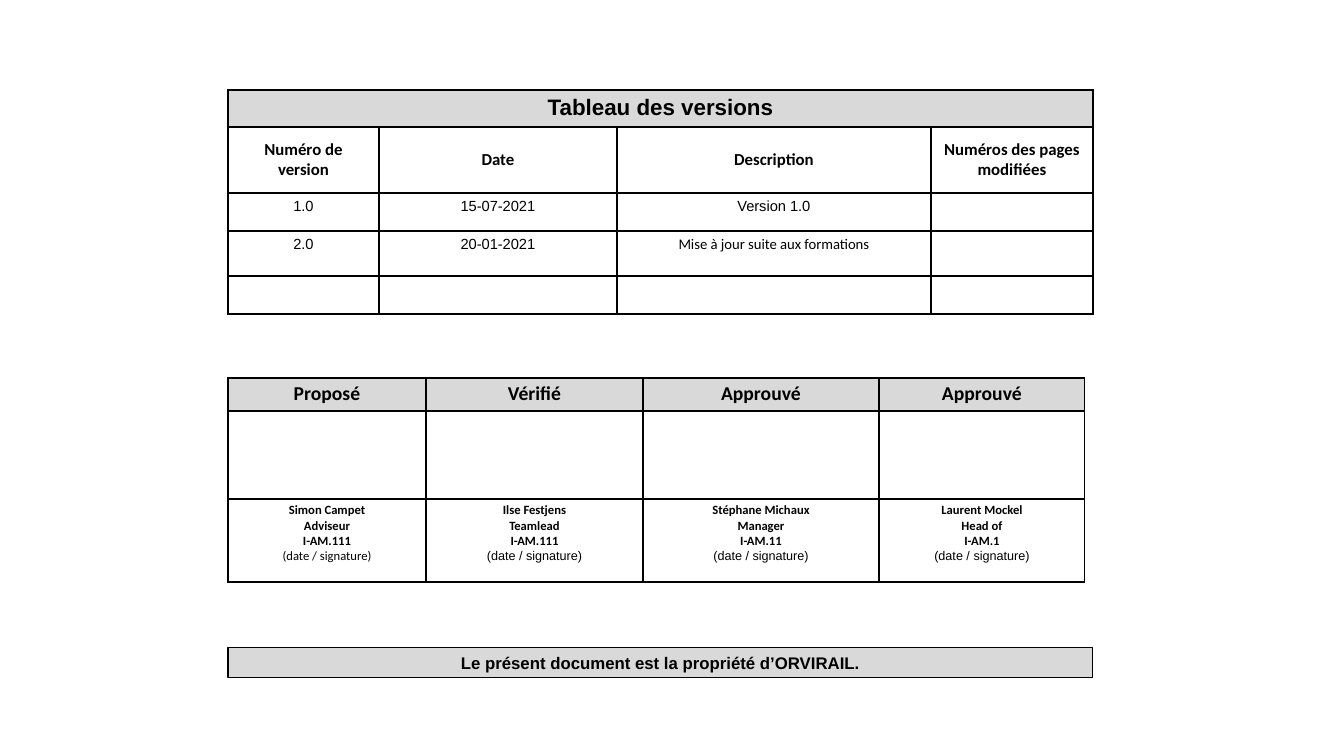
from lxml.etree import SubElement
from pptx import Presentation
from pptx.dml.color import RGBColor
from pptx.enum.shapes import MSO_SHAPE
from pptx.enum.text import MSO_ANCHOR, PP_ALIGN
from pptx.oxml.ns import qn
from pptx.util import Emu, Pt

COLORS = {"text": "000000", "line": "000000", "band": "D9D9D9", "cell": "FFFFFF"}

# Text styles: font, size in points, bold
STYLES = {
    "title": ("Arial", 16, True),
    "header": ("Calibri", 12, True),
    "body": ("Arial", 10.5, False),
    "body_calibri": ("Calibri", 10.5, False),
    "role": ("Calibri", 14, True),
    "person": ("Calibri", 9, True),
    "sign": ("Arial", 9, False),
    "sign_calibri": ("Calibri", 9, False),
    "footer": ("Arial", 12, True),
}

VERSION_TITLE = "Tableau des versions"
VERSION_HEADERS = ["Numéro de version", "Date", "Description", "Numéros des pages modifiées"]
VERSIONS = [
    [("1.0", "body"), ("15-07-2021", "body"), ("Version 1.0", "body"), ("", "body")],
    [("2.0", "body"), ("20-01-2021", "body"),
     ("Mise à jour suite aux formations", "body_calibri"), ("", "body")],
    [("", "body")] * 4,
]

SIGN = "(date / signature)"
SIGNATORIES = [
    ("Proposé", ["Simon Campet", "Adviseur", "I-AM.111"], "sign_calibri"),
    ("Vérifié", ["Ilse Festjens", "Teamlead", "I-AM.111"], "sign"),
    ("Approuvé", ["Stéphane Michaux", "Manager", "I-AM.11"], "sign"),
    ("Approuvé", ["Laurent Mockel", "Head of", "I-AM.1"], "sign"),
]
FOOTER = "Le présent document est la propriété d’ORVIRAIL."

# Lengths in px
SLIDE = (1344, 756)
LEFT = 228
VERSION_TOP, VERSION_COLS, VERSION_ROWS = 90, [151, 238, 314, 162], [37, 66, 38, 45, 38]
SIGN_TOP, SIGN_COLS, SIGN_ROWS = 378, [198, 217, 236, 206], [33, 88, 83]
SIGN_MARGINS = (7, 4)
FOOTER_TOP, FOOTER_HEIGHT = 648, 30


def px(n):
    return Emu(round(n * 914400 / 100.8))


def rgb(name):
    return RGBColor.from_string(COLORS[name])


def write(tf, lines):
    """Fill a text frame with centred (text, style) paragraphs."""
    for i, (text, style) in enumerate(lines):
        p = tf.paragraphs[0] if i == 0 else tf.add_paragraph()
        p.alignment = PP_ALIGN.CENTER
        font, size, bold = STYLES[style]
        if not text:
            end = SubElement(p._p, qn("a:endParaRPr"))
            end.set("sz", str(int(size * 100)))
            continue
        r = p.add_run()
        r.text = text
        r.font.name, r.font.size, r.font.bold = font, Pt(size), bold
        r.font.color.rgb = rgb("text")


def add_borders(cell):
    tcPr = cell._tc.get_or_add_tcPr()
    for side in ("lnL", "lnR", "lnT", "lnB"):
        ln = SubElement(tcPr, qn("a:" + side), w=str(Pt(1)))
        fill = SubElement(ln, qn("a:solidFill"))
        SubElement(fill, qn("a:srgbClr"), val=COLORS["line"])


def add_grid(slide, top, cols, rows, cells, margins=None):
    """Add a bordered table whose first row is shaded; cells hold lists of lines."""
    frame = slide.shapes.add_table(len(rows), len(cols), px(LEFT), px(top),
                                   px(sum(cols)), px(sum(rows)))
    table = frame.table
    table.first_row = table.horz_banding = False
    for column, width in zip(table.columns, cols):
        column.width = px(width)
    for i, (row, height) in enumerate(zip(table.rows, rows)):
        row.height = px(height)
        for cell, lines in zip(row.cells, cells[i]):
            if margins:
                cell.margin_left = cell.margin_right = px(margins[0])
                cell.margin_top = cell.margin_bottom = px(margins[1])
            add_borders(cell)
            cell.fill.solid()
            cell.fill.fore_color.rgb = rgb("cell" if i else "band")
            write(cell.text_frame, lines)
    return table


def add_versions(slide):
    cells = [[[(VERSION_TITLE, "title")]] + [[("", "title")]] * 3]
    cells.append([[(text, "header")] for text in VERSION_HEADERS])
    cells += [[[entry] for entry in row] for row in VERSIONS]
    table = add_grid(slide, VERSION_TOP, VERSION_COLS, VERSION_ROWS, cells)
    table.cell(0, 0).merge(table.cell(0, len(VERSION_COLS) - 1))
    for cell in table.rows[1].cells:
        cell.vertical_anchor = MSO_ANCHOR.MIDDLE


def add_signatures(slide):
    cells = [
        [[(role, "role")] for role, _, _ in SIGNATORIES],
        [[("", "person")] for _ in SIGNATORIES],
        [[(line, "person") for line in person] + [(SIGN, style)]
         for _, person, style in SIGNATORIES],
    ]
    add_grid(slide, SIGN_TOP, SIGN_COLS, SIGN_ROWS, cells, SIGN_MARGINS)


def add_footer(slide):
    s = slide.shapes.add_shape(MSO_SHAPE.RECTANGLE, px(LEFT), px(FOOTER_TOP),
                               px(sum(VERSION_COLS)), px(FOOTER_HEIGHT))
    s.shadow.inherit = False
    s.fill.solid()
    s.fill.fore_color.rgb = rgb("band")
    s.line.color.rgb = rgb("line")
    s.line.width = Pt(0.75)
    s.text_frame.word_wrap = True
    write(s.text_frame, [(FOOTER, "footer")])


def main():
    prs = Presentation()
    prs.slide_width, prs.slide_height = map(px, SLIDE)
    slide = prs.slides.add_slide(prs.slide_layouts[6])
    add_footer(slide)
    add_versions(slide)
    add_signatures(slide)
    prs.save("out.pptx")


if __name__ == "__main__":
    main()
